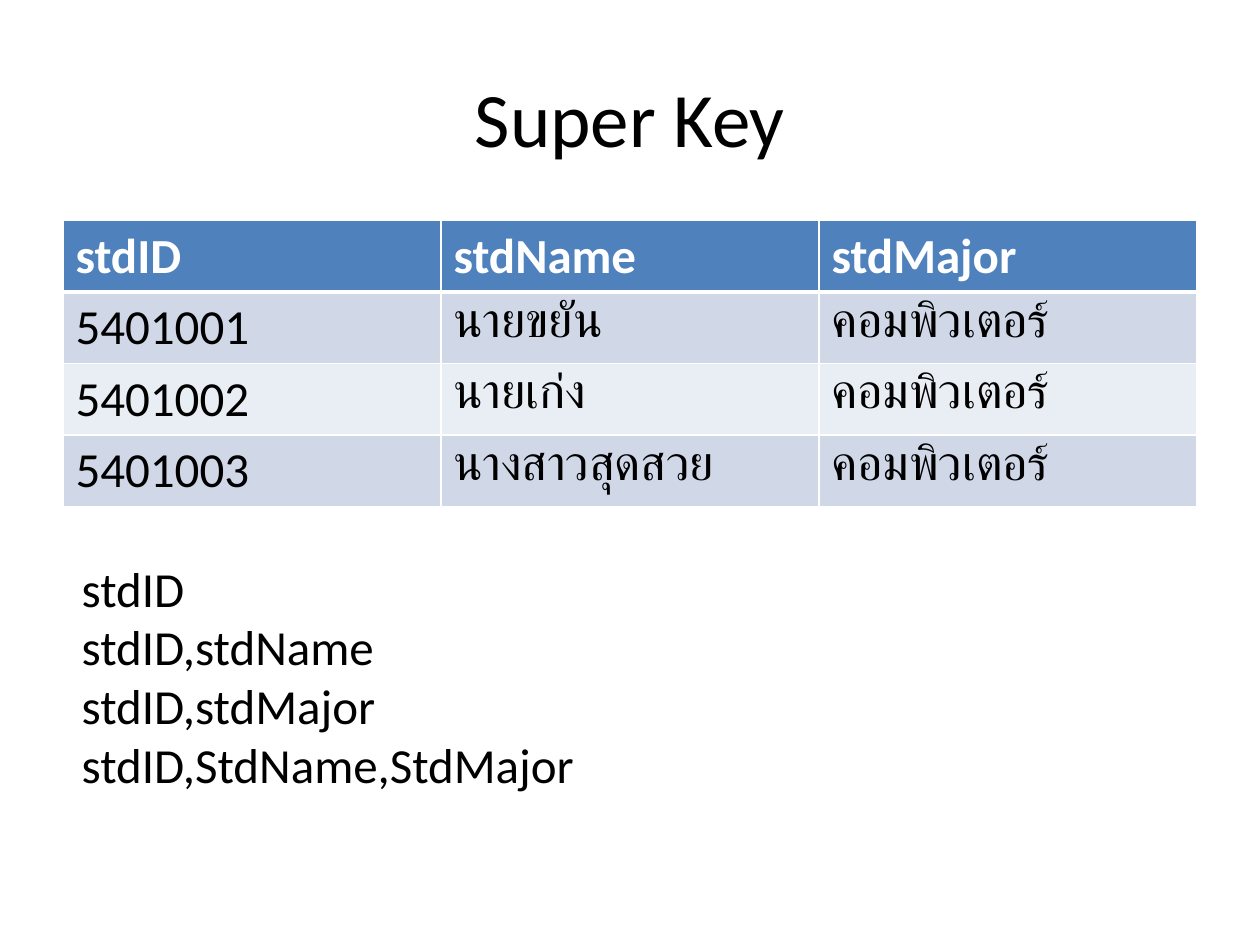
from lxml.etree import SubElement
from pptx import Presentation
from pptx.dml.color import RGBColor
from pptx.enum.text import MSO_ANCHOR, PP_ALIGN
from pptx.oxml.ns import qn
from pptx.util import Inches, Pt

COLORS = {
    "text": "000000",
    "white": "FFFFFF",
    "header": "4F81BD",
    "odd_row": "D0D8E8",
    "even_row": "E9EDF4",
}
FONT = "Calibri"


def add_text(paragraph, text, size=28, color="text", bold=False):
    run = paragraph.add_run()
    run.text = text
    run.font.name = FONT
    run.font.size = Pt(size)
    run.font.bold = bold
    run.font.color.rgb = RGBColor.from_string(COLORS[color])


def add_border(cell, side, points):
    properties = cell._tc.get_or_add_tcPr()
    line = SubElement(properties, qn(f"a:ln{side}"), w=str(Pt(points)))
    fill = SubElement(line, qn("a:solidFill"))
    SubElement(fill, qn("a:srgbClr"), val=COLORS["white"])


presentation = Presentation()
presentation.slide_width = Inches(10)
presentation.slide_height = Inches(7.5)
slide = presentation.slides.add_slide(presentation.slide_layouts[6])

# Grid: equal columns between the side margins
margin = presentation.slide_width * 0.05
content_width = presentation.slide_width * 0.9

# Title
title = slide.shapes.add_textbox(int(margin), Inches(0.3), int(content_width), Inches(1.25))
title_frame = title.text_frame
title_frame.word_wrap = True
title_frame.vertical_anchor = MSO_ANCHOR.MIDDLE
title_frame.paragraphs[0].alignment = PP_ALIGN.CENTER
add_text(title_frame.paragraphs[0], "Super Key", size=44)

# Student table
students = [
    ["stdID", "stdName", "stdMajor"],
    ["5401001", "นายขยัน", "คอมพิวเตอร์"],
    ["5401002", "นายเก่ง", "คอมพิวเตอร์"],
    ["5401003", "นางสาวสุดสวย", "คอมพิวเตอร์"],
]
table = slide.shapes.add_table(
    len(students), len(students[0]),
    int(margin), Inches(1.75), int(content_width), Inches(2.27),
).table
for row_index, row in enumerate(students):
    is_header = row_index == 0
    row_fill = "header" if is_header else "odd_row" if row_index % 2 else "even_row"
    borders = {
        "L": 1,
        "R": 1,
        "T": 3 if row_index == 1 else 1,
        "B": 3 if is_header else 1,
    }
    for column_index, text in enumerate(row):
        cell = table.cell(row_index, column_index)
        for side, points in borders.items():
            add_border(cell, side, points)
        cell.fill.solid()
        cell.fill.fore_color.rgb = RGBColor.from_string(COLORS[row_fill])
        add_text(
            cell.text_frame.paragraphs[0], text,
            color="white" if is_header else "text", bold=is_header,
        )

# Super keys of the table
super_keys = ["stdID", "stdID,stdName", "stdID,stdMajor", "stdID,StdName,StdMajor"]
key_list = slide.shapes.add_textbox(Inches(0.55), Inches(4.38), Inches(8.98), Inches(1.99))
key_frame = key_list.text_frame
key_frame.word_wrap = True
for index, super_key in enumerate(super_keys):
    paragraph = key_frame.add_paragraph() if index else key_frame.paragraphs[0]
    add_text(paragraph, super_key)

presentation.save("out.pptx")
